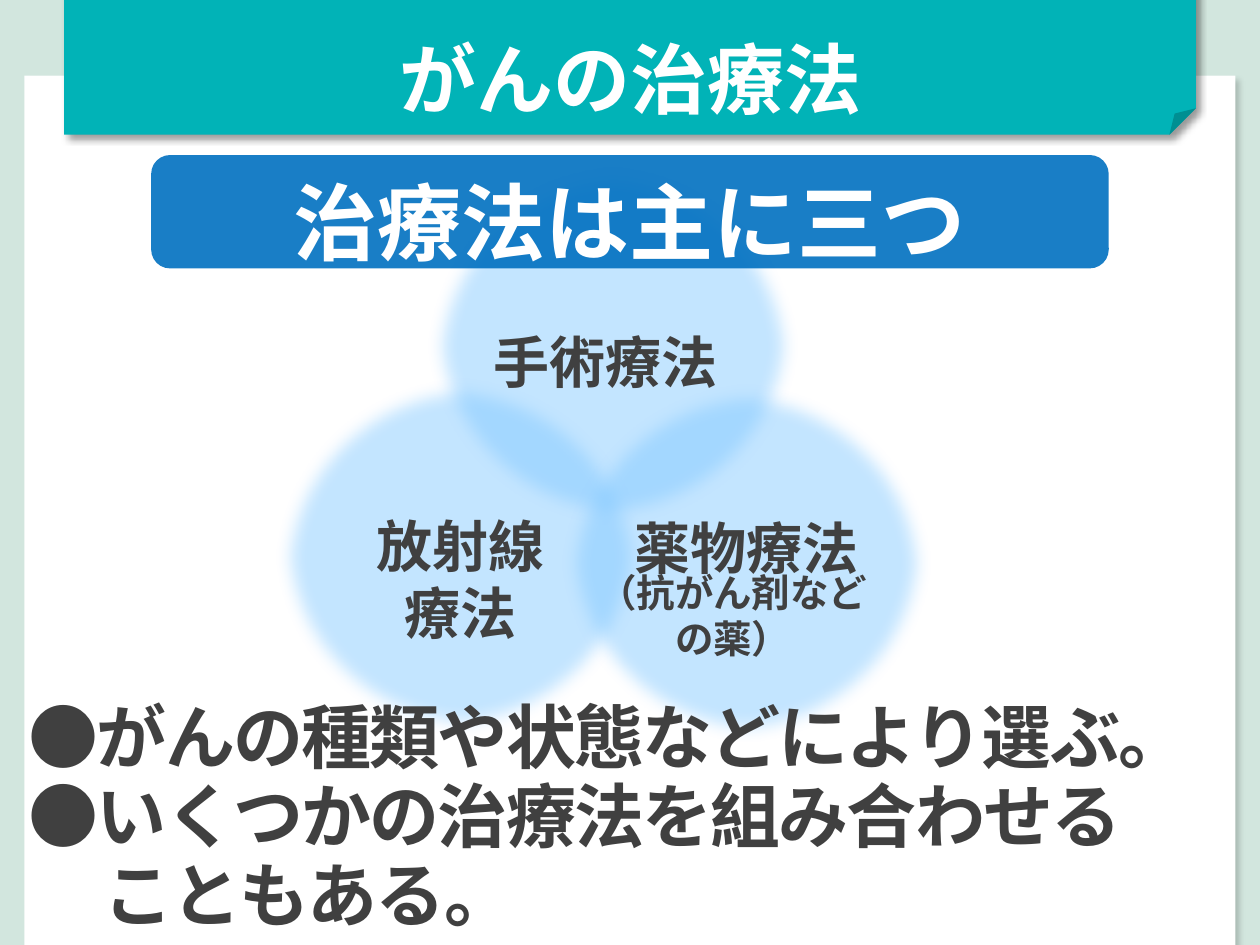
from dataclasses import dataclass

from lxml import etree
from pptx import Presentation
from pptx.dml.color import RGBColor
from pptx.enum.shapes import MSO_SHAPE
from pptx.enum.text import MSO_ANCHOR, PP_ALIGN
from pptx.oxml.ns import qn
from pptx.util import Pt

RECT, ROUND = MSO_SHAPE.RECTANGLE, MSO_SHAPE.ROUNDED_RECTANGLE
FOLDED, OVAL = MSO_SHAPE.FOLDED_CORNER, MSO_SHAPE.OVAL
CENTER, LEFT, JUSTIFY = PP_ALIGN.CENTER, PP_ALIGN.LEFT, PP_ALIGN.JUSTIFY
TOP, MIDDLE = MSO_ANCHOR.TOP, MSO_ANCHOR.MIDDLE

FONT = "Noto Sans CJK JP"
MINT = RGBColor(0xD2, 0xE6, 0xDE)
TEAL = RGBColor(0x01, 0xB3, 0xB7)
BLUE = RGBColor(0x00, 0x70, 0xC0)
SKY = RGBColor(0x81, 0xC9, 0xFF)
WHITE = RGBColor(0xFF, 0xFF, 0xFF)
DARK = RGBColor(0x40, 0x40, 0x40)


@dataclass
class Box:
    """Position and size in points."""
    x: float
    y: float
    w: float
    h: float


@dataclass
class Therapy:
    x: float
    y: float
    lines: list[str]
    align: PP_ALIGN
    top: float
    bottom: float
    side: float


CIRCLE_W, CIRCLE_H = 213.8, 207.4
THERAPIES = [
    Therapy(243.4, 94.3, ["手術療法"], JUSTIFY, 20, 3.6, 7.2),
    Therapy(156.2, 214.6, ["放射線", "療法"], CENTER, 28, 3.6, 7.2),
    Therapy(319.7, 218.2, ["薬物療法"], CENTER, 0, 19, 0),
]
# Text and first-line indent
POINTS = [
    ("●がんの種類や状態などにより選ぶ。", -42.5),
    ("●いくつかの治療法を組み合わせる", -42.5),
    ("こともある。", 0),
]


def add_effect(sp, name: str, **attrs: int):
    """Put one effect in the shape's effect list."""
    effects = sp._element.spPr.find(qn("a:effectLst"))
    return etree.SubElement(effects, qn(name), {k: str(v) for k, v in attrs.items()})


def add_panel(s, kind, box: Box, color: RGBColor, opacity: int = 100):
    sp = s.shapes.add_shape(kind, Pt(box.x), Pt(box.y), Pt(box.w), Pt(box.h))
    sp.shadow.inherit = False
    sp.fill.solid()
    sp.fill.fore_color.rgb = color
    sp.line.fill.background()
    if opacity < 100:
        clr = sp._element.spPr.find(qn("a:solidFill"))[0]
        etree.SubElement(clr, qn("a:alpha"), val=str(opacity * 1000))
    return sp


def add_shadow(sp, opacity: int, blur: float, dist: float) -> None:
    shadow = add_effect(sp, "a:outerShdw", blurRad=Pt(blur), dist=Pt(dist),
                        dir=45 * 60000, algn="tl", rotWithShape=0)
    clr = etree.SubElement(shadow, qn("a:srgbClr"), val="000000")
    etree.SubElement(clr, qn("a:alpha"), val=str(opacity * 1000))


def add_text_box(s, box: Box):
    return s.shapes.add_textbox(Pt(box.x), Pt(box.y), Pt(box.w), Pt(box.h))


def write(sp, lines: list[str], size: float, color: RGBColor, align=CENTER,
          anchor=TOP, top: float = 3.6, bottom: float = 3.6, side: float = 7.2):
    tf = sp.text_frame
    tf.word_wrap = True
    tf.vertical_anchor = anchor
    tf.margin_top, tf.margin_bottom = Pt(top), Pt(bottom)
    tf.margin_left = tf.margin_right = Pt(side)
    for i, line in enumerate(lines):
        p = tf.add_paragraph() if i else tf.paragraphs[0]
        p.alignment = align
        r = p.add_run()
        r.text = line
        r.font.name = FONT
        r.font.size = Pt(size)
        r.font.bold = True
        r.font.color.rgb = color
        etree.SubElement(r.font._element, qn("a:ea"), typeface=FONT)
    return tf


def add_therapy(s, item: Therapy) -> None:
    sp = add_panel(s, OVAL, Box(item.x, item.y, CIRCLE_W, CIRCLE_H), SKY, 47)
    add_effect(sp, "a:softEdge", rad=Pt(10))
    write(sp, item.lines, 32, DARK, item.align, MIDDLE,
          item.top, item.bottom, item.side)


def add_points(s) -> None:
    sp = add_text_box(s, Box(9.4, 396, 701.3, 144))
    tf = write(sp, [text for text, _ in POINTS], 40, DARK, LEFT)
    for p, (_, indent) in zip(tf.paragraphs, POINTS):
        p.line_spacing = Pt(45)
        pPr = p._p.get_or_add_pPr()
        pPr.set("marL", str(Pt(42.5)))
        pPr.set("indent", str(Pt(indent)))
        p.runs[0].font._element.set("spc", "-100")


def main() -> None:
    prs = Presentation()
    prs.slide_width, prs.slide_height = Pt(720), Pt(540)
    s = prs.slides.add_slide(prs.slide_layouts[6])

    # Background, paper and folded title band
    s.background.fill.solid()
    s.background.fill.fore_color.rgb = MINT
    paper = add_panel(s, RECT, Box(14, 43.2, 692, 509), WHITE)
    add_shadow(paper, 18, 3, 4)
    band = add_panel(s, FOLDED, Box(36.7, -13.7, 646.6, 90.7), TEAL)
    add_shadow(band, 40, 4, 3)

    # Three overlapping therapies
    for item in THERAPIES:
        add_therapy(s, item)
    note = add_text_box(s, Box(322.6, 321.8, 192.2, 60.5))
    write(note, ["（抗がん剤など", "の薬）"], 22, DARK)

    # Title, key points and headline
    write(add_text_box(s, Box(173.5, 14.4, 373.7, 60.5)), ["がんの治療法"], 44, WHITE)
    add_points(s)
    headline = add_panel(s, ROUND, Box(86.4, 88.6, 547.2, 64.8), BLUE, 90)
    write(headline, ["治療法は主に三つ"], 48, WHITE, anchor=MIDDLE, top=14.4)

    prs.save("out.pptx")


if __name__ == "__main__":
    main()
